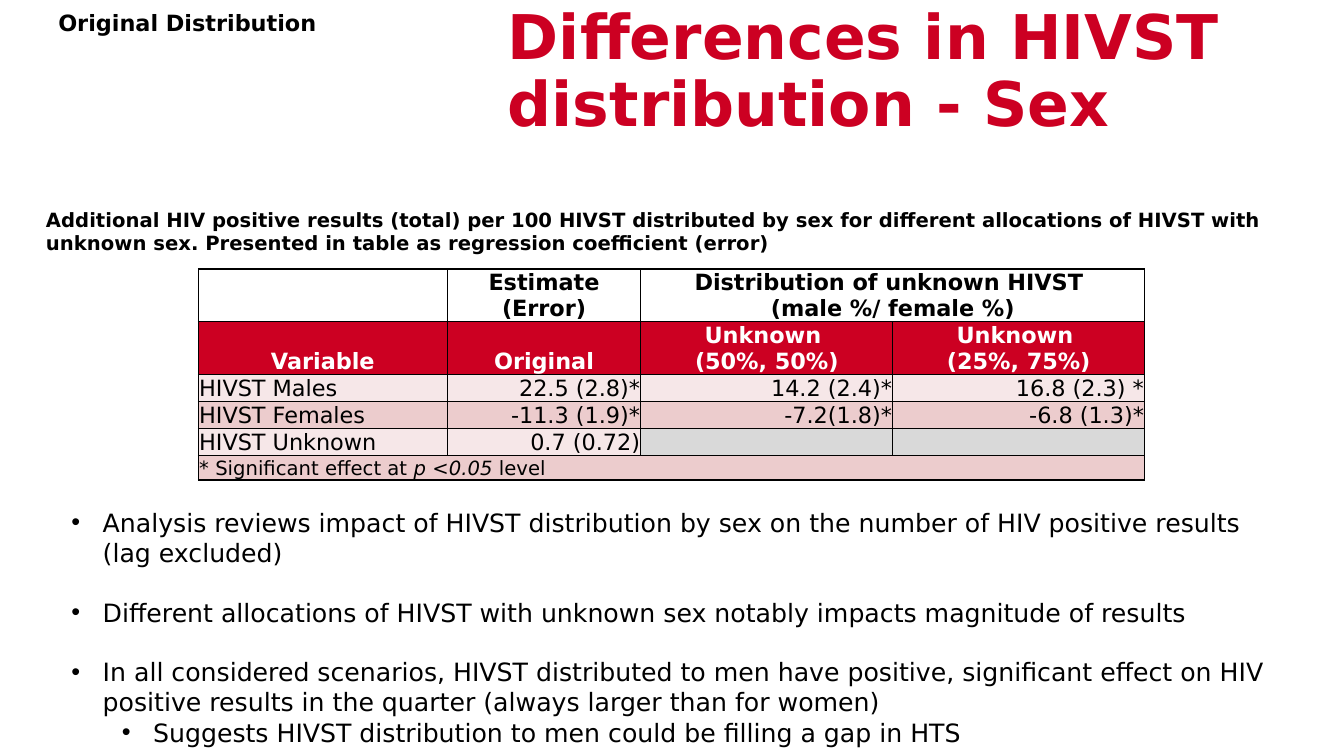
"""Builds the slide on differences in HIVST distribution by sex."""
from dataclasses import dataclass

from lxml import etree
from pptx import Presentation
from pptx.dml.color import RGBColor
from pptx.enum.text import MSO_ANCHOR, MSO_AUTO_SIZE, PP_ALIGN
from pptx.oxml.ns import qn
from pptx.util import Cm, Pt

LEFT, CENTER, RIGHT = PP_ALIGN.LEFT, PP_ALIGN.CENTER, PP_ALIGN.RIGHT
TOP, MIDDLE, BOTTOM = MSO_ANCHOR.TOP, MSO_ANCHOR.MIDDLE, MSO_ANCHOR.BOTTOM
GROW, FIXED = MSO_AUTO_SIZE.SHAPE_TO_FIT_TEXT, MSO_AUTO_SIZE.NONE


@dataclass(frozen=True)
class Theme:
    font: str = "DejaVu Sans"
    black: str = "000000"
    white: str = "FFFFFF"
    red: str = "CC0022"
    pale: str = "F6E7E8"
    pink: str = "ECCCCD"
    gray: str = "D9D9D9"
    title: int = 44
    body: int = 18
    cell: int = 16
    note: int = 14


theme = Theme()


def add_run(para, text, size, color=theme.black, bold=False, italic=False):
    run = para.add_run()
    run.text = text
    font = run.font
    font.name, font.size = theme.font, Pt(size)
    font.bold, font.italic = bold, italic
    font.color.rgb = RGBColor.from_string(color)


def add_box(left, top, width, height, fit=GROW):
    box = slide.shapes.add_textbox(Cm(left), Cm(top), Cm(width), Cm(height))
    frame = box.text_frame
    frame.word_wrap, frame.auto_size = True, fit
    return frame


deck = Presentation()
deck.slide_width, deck.slide_height = Cm(33.87), Cm(19.05)
slide = deck.slides.add_slide(deck.slide_layouts[6])

widths = [6.27, 4.88, 6.35, 6.35]
heights = [1.31, 1.34, 0.68, 0.68, 0.68, 0.61]
rows = [
    ["", "Estimate (Error)", "Distribution of unknown HIVST \n(male %/ female %)", ""],
    ["Variable", "Original", "Unknown \n(50%, 50%)", "Unknown \n(25%, 75%)"],
    ["HIVST Males", "22.5 (2.8)*", "14.2 (2.4)*", "16.8 (2.3) *"],
    ["HIVST Females", "-11.3 (1.9)*", "-7.2(1.8)*", "-6.8 (1.3)*"],
    ["HIVST Unknown", "0.7 (0.72)", "", ""],
    ["", "", "", ""],
]
fills = [theme.white, theme.red, theme.pale, theme.pink, theme.pale, theme.pink]

frame = slide.shapes.add_table(
    len(rows), len(widths), Cm(5), Cm(6.78), Cm(sum(widths)), Cm(sum(heights)))
table = frame.table
table.first_row = table.horz_banding = False
for col, width in zip(table.columns, widths):
    col.width = Cm(width)
for row, height in zip(table.rows, heights):
    row.height = Cm(height)

for r, texts in enumerate(rows):
    head = r < 2
    for c, text in enumerate(texts):
        cell = table.cell(r, c)
        cell.vertical_anchor = BOTTOM
        cell.margin_left = cell.margin_right = cell.margin_top = Cm(0.02)
        cell.margin_bottom = 0
        shade = theme.gray if r == 4 and c > 1 else fills[r]
        cell.fill.solid()
        cell.fill.fore_color.rgb = RGBColor.from_string(shade)
        props = cell._tc.get_or_add_tcPr()
        for i, side in enumerate(("lnL", "lnR", "lnT", "lnB")):
            line = etree.Element(qn("a:" + side), w=str(Pt(1)))
            solid = etree.SubElement(line, qn("a:solidFill"))
            etree.SubElement(solid, qn("a:srgbClr"), val=theme.black)
            props.insert(i, line)
        for i, part in enumerate(text.split("\n")):
            para = cell.text_frame.add_paragraph() if i else cell.text_frame.paragraphs[0]
            para.alignment = CENTER if head else RIGHT if c else LEFT
            if part:
                add_run(para, part, theme.cell, theme.white if r == 1 else theme.black, head)
            else:
                para._p.get_or_add_endParaRPr().set("sz", str(theme.note * 100))

table.cell(0, 2).merge(table.cell(0, 3))
table.cell(5, 0).merge(table.cell(5, 3))
para = table.cell(5, 0).text_frame.paragraphs[0]
for text, slant in (("* Significant effect at ", False), ("p <0.05 ", True), ("level", False)):
    add_run(para, text, theme.note, italic=slant)

label = add_box(1.22, 0.1, 13.18, 0.94)
add_run(label.paragraphs[0], "Original Distribution", theme.cell, bold=True)

title = add_box(12.8, 0, 19.81, 3.68, FIXED)
title.vertical_anchor = MIDDLE
title.margin_left = title.margin_right = title.margin_top = title.margin_bottom = 0
title.paragraphs[0].line_spacing = 0.9
add_run(title.paragraphs[0], "Differences in HIVST distribution - Sex",
        theme.title, theme.red, True)

points = [
    (0, 0, "Analysis reviews impact of HIVST distribution by sex on the number of "
           "HIV positive results (lag excluded)"),
    (0, 21, "Different allocations of HIVST with unknown sex notably impacts "
            "magnitude of results"),
    (0, 21, "In all considered scenarios, HIVST distributed to men have positive, "
            "significant effect on HIV positive results in the quarter "
            "(always larger than for women)"),
    (1, 0, "Suggests HIVST distribution to men could be filling a gap in HTS"),
]
body = add_box(1.55, 12.65, 30.78, 6.4)
for i, (level, gap, text) in enumerate(points):
    para = body.add_paragraph() if i else body.paragraphs[0]
    para.level, para.space_before = level, Pt(gap)
    props = para._p.get_or_add_pPr()
    props.set("marL", str(Cm(0.79 + 1.27 * level)))
    props.set("indent", str(Cm(-0.79)))
    etree.SubElement(props, qn("a:buFont"), typeface="Arial")
    etree.SubElement(props, qn("a:buChar"), char="•")
    add_run(para, text, theme.body)

lead = add_box(0.91, 5.11, 32.05, 1.45)
add_run(lead.paragraphs[0],
        "Additional HIV positive results (total) per 100 HIVST distributed by sex for "
        "different allocations of HIVST with unknown sex. Presented in table as "
        "regression coefficient (error)", theme.note, bold=True)

deck.save("out.pptx")
